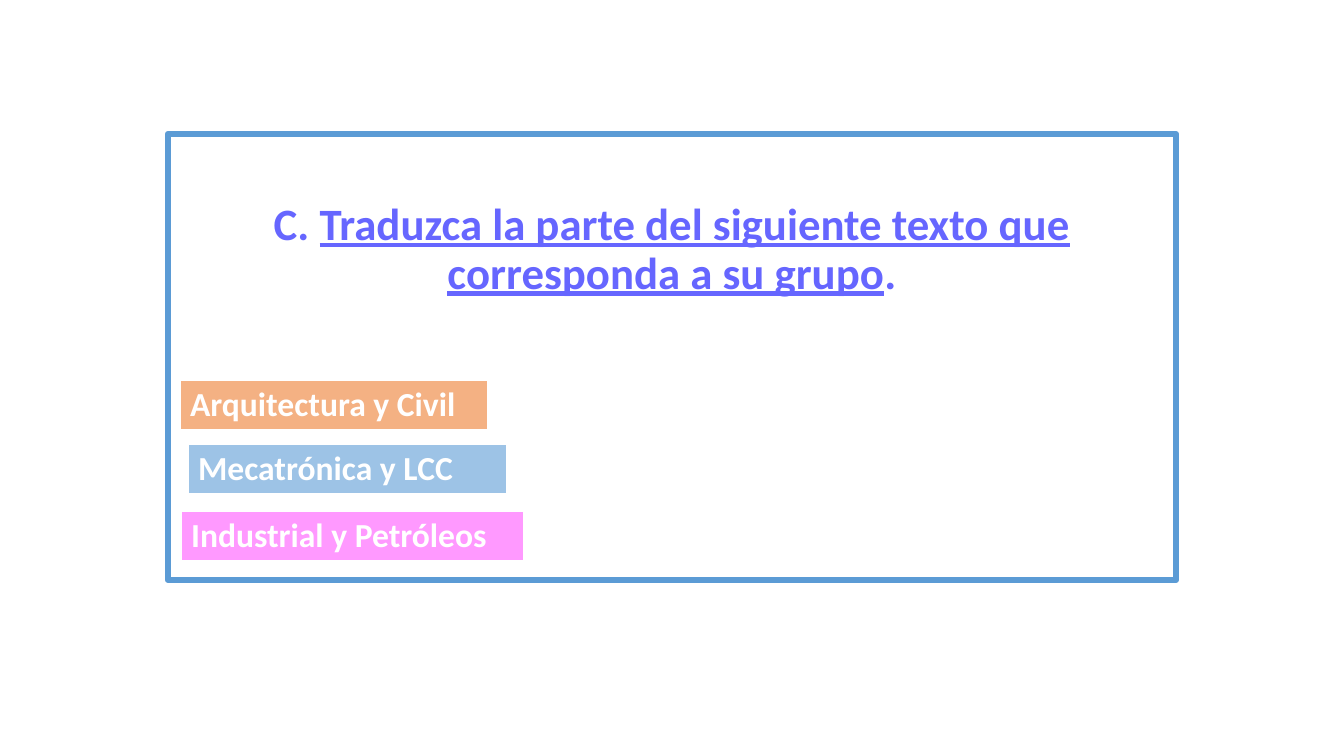
from lxml.etree import SubElement
from pptx import Presentation
from pptx.dml.color import RGBColor
from pptx.enum.text import MSO_ANCHOR, MSO_AUTO_SIZE, PP_ALIGN
from pptx.oxml.ns import qn
from pptx.util import Emu, Pt

EMU_PER_PX = 914400 / 100.8
COLORS = {
    "frame": "5B9BD5",
    "instruction": "6666FF",
    "white": "FFFFFF",
    "orange": "F4B183",
    "blue": "9DC3E6",
    "pink": "FF99FF",
}
INSTRUCTION = [
    ("C. ", False),
    ("Traduzca la parte del siguiente texto que corresponda a su grupo", True),
    (".", False),
]
GROUPS = [
    ("Arquitectura y Civil", "orange", 12, 246, 308),
    ("Industrial y Petróleos", "pink", 13, 377, 343),
    ("Mecatrónica y LCC", "blue", 20, 310, 319),
]
GROUP_HEIGHT = 50
BORDER_WIDTHS = {"a:lnL": 1, "a:lnR": 1, "a:lnT": 1, "a:lnB": 3}


def px(length):
    return Emu(round(length * EMU_PER_PX))


def color(name):
    return RGBColor.from_string(COLORS[name])


def apply_format(target, values):
    for attribute, value in values.items():
        setattr(target, attribute, value)


def add_run(paragraph, text, size, color_name, underline=False):
    run = paragraph.add_run()
    run.text = text
    apply_format(run.font, {"name": "Calibri", "size": Pt(size), "bold": True, "underline": underline})
    run.font.color.rgb = color(color_name)


def add_instruction(slide, left, top, width, height):
    instruction = slide.shapes.title
    apply_format(instruction, {"left": px(left), "top": px(top), "width": px(width), "height": px(height)})
    instruction.fill.background()
    instruction.line.color.rgb = color("frame")
    instruction.line.width = Pt(4.5)
    apply_format(instruction.text_frame, {
        "word_wrap": True,
        "auto_size": MSO_AUTO_SIZE.NONE,
        "vertical_anchor": MSO_ANCHOR.TOP,
        "margin_left": px(10),
        "margin_right": px(10),
        "margin_top": px(68),
    })
    paragraph = instruction.text_frame.paragraphs[0]
    apply_format(paragraph, {"alignment": PP_ALIGN.CENTER, "line_spacing": 0.9, "space_before": Pt(0)})
    for text, underline in INSTRUCTION:
        add_run(paragraph, text, 32, "instruction", underline)


def add_borders(cell):
    properties = cell._tc.get_or_add_tcPr()
    for side, width in BORDER_WIDTHS.items():
        border = SubElement(properties, qn(side), w=str(Pt(width)))
        fill = SubElement(border, qn("a:solidFill"))
        SubElement(fill, qn("a:srgbClr"), val=COLORS["white"])


def add_group(slide, text, fill_name, left, top, width):
    group = slide.shapes.add_table(1, 1, px(left), px(top), px(width), px(GROUP_HEIGHT)).table
    cell = group.cell(0, 0)
    add_borders(cell)
    cell.fill.solid()
    cell.fill.fore_color.rgb = color(fill_name)
    add_run(cell.text_frame.paragraphs[0], text, 24, "white")


def add_exercise(slide, left, top, width, height):
    add_instruction(slide, left, top, width, height)
    for text, fill_name, offset_x, offset_y, group_width in GROUPS:
        add_group(slide, text, fill_name, left + offset_x, top + offset_y, group_width)


def main():
    presentation = Presentation()
    apply_format(presentation, {"slide_width": px(1344), "slide_height": px(756)})
    slide = presentation.slides.add_slide(presentation.slide_layouts[5])
    add_exercise(slide, 168, 134, 1008, 446)
    presentation.save("out.pptx")


if __name__ == "__main__":
    main()
